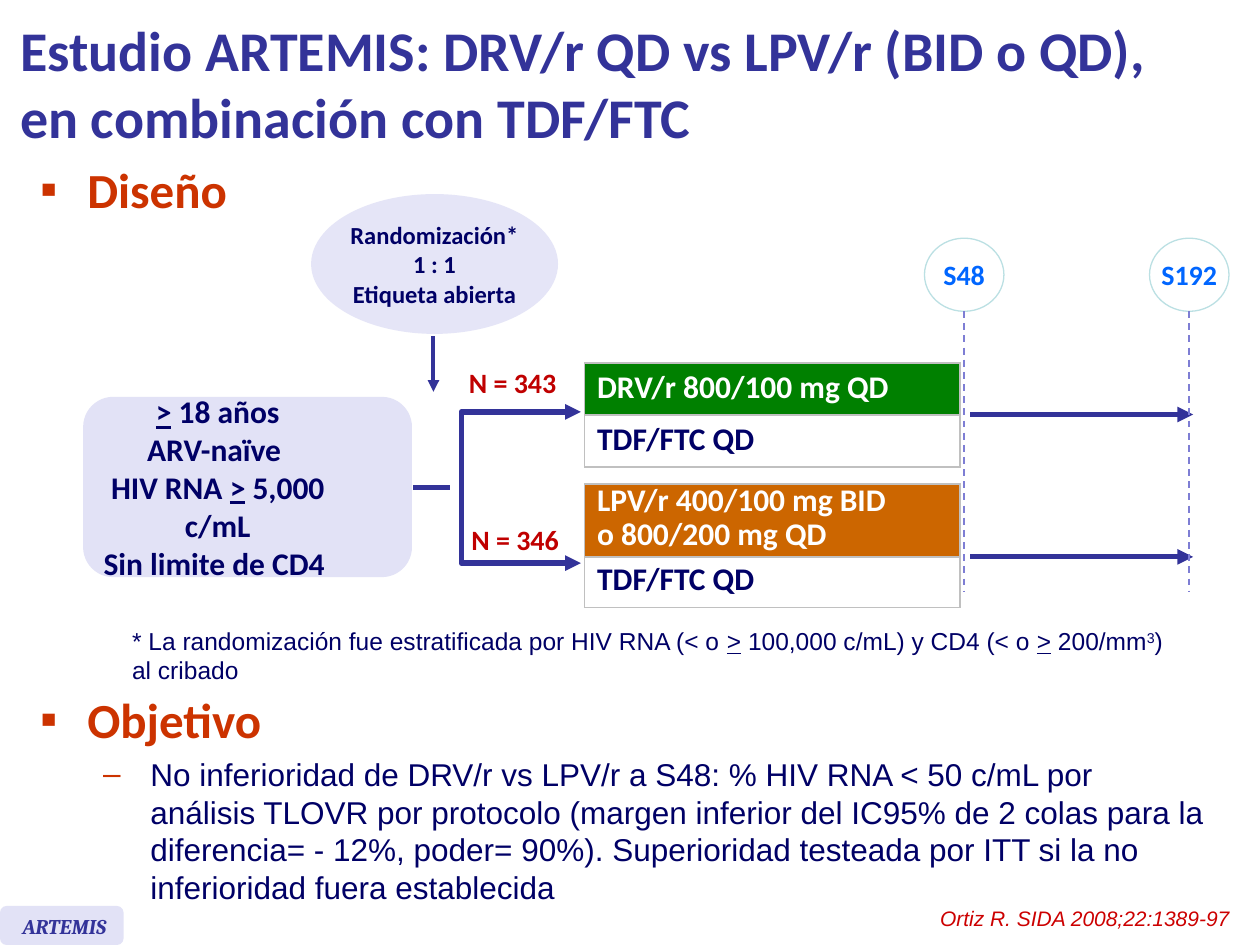
"""Build the ARTEMIS study design slide."""
from dataclasses import dataclass
from typing import Any, NamedTuple

from lxml import etree
from pptx import Presentation
from pptx.dml.color import RGBColor
from pptx.enum import dml, shapes, text
from pptx.oxml import ns
from pptx.util import Pt

COLOURS = {
    "indigo": "333399", "navy": "000066", "rust": "CC3300", "crimson": "C00000",
    "citation": "CC0000", "visit": "0066FF", "visit_edge": "BBE0E3", "guide": "7E7ED4",
    "lilac": "E2E2F6", "pale": "E5E5F7", "white": "FFFFFF", "grid": "C0C0C0",
    "green": "008000", "orange": "CC6600",
}
LEFT, CENTRE, RIGHT = text.PP_ALIGN.LEFT, text.PP_ALIGN.CENTER, text.PP_ALIGN.RIGHT
MIDDLE = text.MSO_ANCHOR.MIDDLE


class Box(NamedTuple):
    """Left, top, width and height in points."""
    left: float
    top: float
    width: float
    height: float


class Piece(NamedTuple):
    """A run of text with its own marks."""
    words: str
    underline: bool = False
    raised: bool = False


@dataclass
class Style:
    """Character and paragraph format."""
    size: float
    colour: str
    name: str = "Calibri"
    bold: bool = True
    italic: bool = False
    align: Any = LEFT
    spacing: float = 1.0
    before: float = 0


@dataclass
class Arm:
    """A treatment arm shown as a two-row table."""
    box: Box
    regimen: tuple
    fill: str
    heights: tuple
    spacing: float


@dataclass
class Visit:
    """A study visit with its vertical guide."""
    label: str
    centre: float


def rgb(key: str) -> RGBColor:
    """Return a palette colour."""
    return RGBColor.from_string(COLOURS[key])


def assign(target: Any, values: dict) -> None:
    """Set attributes from a dict."""
    for attribute, value in values.items():
        setattr(target, attribute, value)


def sub(parent: Any, tag: str, **attributes: str) -> Any:
    """Append a drawing element."""
    return etree.SubElement(parent, ns.qn(tag), attributes)


def write(frame: Any, paragraphs: tuple, style: Style) -> None:
    """Fill a text frame; a paragraph is a string or a tuple of pieces."""
    for index, content in enumerate(paragraphs):
        para = frame.paragraphs[0] if index == 0 else frame.add_paragraph()
        assign(para, {"alignment": style.align, "line_spacing": style.spacing,
                      "space_before": Pt(style.before if index else 0)})
        for piece in (Piece(content),) if isinstance(content, str) else content:
            for part, words in enumerate(piece.words.split("\v")):
                if part:
                    para.add_line_break()
                run = para.add_run()
                run.text = words
                assign(run.font, {"name": style.name, "size": Pt(style.size), "bold": style.bold,
                                  "italic": style.italic, "underline": piece.underline})
                run.font.color.rgb = rgb(style.colour)
                if piece.raised:
                    run.font._element.set("baseline", "30000")


def label(slide: Any, box: Box, paragraphs: tuple, style: Style, wrap: bool = True) -> Any:
    """Add a text box."""
    frame = slide.shapes.add_textbox(*map(Pt, box)).text_frame
    frame.word_wrap = wrap
    write(frame, paragraphs, style)
    return frame


def bullet(para: Any, mark: str, indent: float) -> None:
    """Give a paragraph a hanging bullet."""
    props = para._p.get_or_add_pPr()
    assign_to = {"marL": str(Pt(indent)), "indent": str(-Pt(27))}
    for key, value in assign_to.items():
        props.set(key, value)
    sub(sub(props, "a:buClr"), "a:srgbClr", val=COLOURS["rust"])
    sub(props, "a:buFont", typeface="Arial")
    sub(props, "a:buChar", char=mark)


def panel(slide: Any, kind: Any, box: Box, fill: str, edge: str = "") -> Any:
    """Add a filled shape and return its text frame."""
    shape = slide.shapes.add_shape(kind, *map(Pt, box))
    shape.shadow.inherit = False
    shape.fill.solid()
    shape.fill.fore_color.rgb = rgb(fill)
    if edge:
        shape.line.color.rgb = rgb(edge)
        shape.line.width = Pt(0.75)
    else:
        shape.line.fill.background()
    assign(shape.text_frame, {"word_wrap": False, "vertical_anchor": MIDDLE})
    return shape.text_frame


def stroke(shape: Any, colour: str, width: float, heads: tuple = ()) -> None:
    """Format a line and its arrowheads."""
    shape.line.color.rgb = rgb(colour)
    shape.line.width = Pt(width)
    for end in heads:
        sub(shape.line._get_or_add_ln(), end, type="triangle")


def link(slide: Any, start: tuple, end: tuple, width: float, colour: str = "indigo",
         heads: tuple = (), dashed: bool = False) -> None:
    """Add a straight line."""
    line = slide.shapes.add_connector(shapes.MSO_CONNECTOR.STRAIGHT, *map(Pt, start + end))
    if dashed:
        line.line.dash_style = dml.MSO_LINE.DASH
    stroke(line, colour, width, heads)
    sub(line._element.spPr, "a:effectLst")


def bracket(slide: Any, points: list) -> None:
    """Add the split into both arms."""
    corners = [tuple(map(Pt, point)) for point in points]
    builder = slide.shapes.build_freeform(*corners[0], scale=1.0)
    builder.add_line_segments(corners[1:], close=False)
    split = builder.convert_to_shape()
    split.shadow.inherit = False
    split.fill.background()
    stroke(split, "indigo", 3, ("a:headEnd", "a:tailEnd"))


def arm_table(slide: Any, arm: Arm) -> None:
    """Add the table of one arm."""
    table = slide.shapes.add_table(2, 1, *map(Pt, arm.box)).table
    assign(table, {"first_row": False, "horz_banding": False})
    rows = ((arm.regimen, arm.fill, "white"), (("TDF/FTC QD",), "white", "navy"))
    for index, (words, fill, ink) in enumerate(rows):
        table.rows[index].height = Pt(arm.heights[index])
        cell = table.cell(index, 0)
        cell.vertical_anchor = MIDDLE
        for side in ("a:lnL", "a:lnR", "a:lnT", "a:lnB"):
            border = sub(cell._tc.get_or_add_tcPr(), side, w=str(Pt(1)))
            sub(sub(border, "a:solidFill"), "a:srgbClr", val=COLOURS["grid"])
        cell.fill.solid()
        cell.fill.fore_color.rgb = rgb(fill)
        write(cell.text_frame, words, Style(18, ink, spacing=arm.spacing, before=3.6))


def main() -> None:
    """Assemble and save the slide."""
    deck = Presentation()
    assign(deck, {"slide_width": Pt(720), "slide_height": Pt(540)})
    slide = deck.slides.add_slide(deck.slide_layouts[5])
    oval, rounded = shapes.MSO_SHAPE.OVAL, shapes.MSO_SHAPE.ROUNDED_RECTANGLE
    tail = ("a:tailEnd",)

    title = slide.shapes.title
    assign(title, dict(zip(("left", "top", "width", "height"), map(Pt, (4.3, 3.6, 715.7, 87)))))
    assign(title.text_frame, {"auto_size": text.MSO_AUTO_SIZE.NONE, "vertical_anchor": MIDDLE})
    write(title.text_frame, ("Estudio ARTEMIS: DRV/r QD vs LPV/r (BID o QD),\v"
                             "en combinación con TDF/FTC",), Style(32, "indigo"))

    panel(slide, rounded, Box(0, 517.7, 70.6, 22.3), "lilac")
    label(slide, Box(5.8, 518.4, 67, 21.6), ("ARTEMIS",), Style(12, "indigo", "Cambria", italic=True))

    heading = Style(28, "rust")
    design = label(slide, Box(15.8, 87.5, 142.6, 45.4), ("Diseño",), heading)
    goal = label(slide, Box(15.8, 390.5, 697.7, 113.8), ("Objetivo",), heading)
    bullet(design.paragraphs[0], "▪", 27)
    bullet(goal.paragraphs[0], "▪", 27)
    detail = goal.add_paragraph()
    bullet(detail, "–", 63)
    assign(detail, {"level": 1, "space_before": Pt(3.6)})
    assign(detail.font, {"name": "Arial", "size": Pt(18), "bold": False})
    detail.font.color.rgb = rgb("navy")
    detail.text = ("No inferioridad de DRV/r vs LPV/r a S48: % HIV RNA < 50 c/mL por \v"
                   "análisis TLOVR por protocolo (margen inferior del IC95% de 2 colas para la "
                   "diferencia= - 12%, poder= 90%). Superioridad testeada por ITT si la no "
                   "inferioridad fuera establecida")
    for run in detail.runs:
        assign(run.font, {"name": "Arial", "size": Pt(18), "bold": False})
        run.font.color.rgb = rgb("navy")

    for count, left, top in (("N = 346", 262, 295.2), ("N = 343", 260.6, 205.2)):
        label(slide, Box(left, top, 64.8, 26.6), (count,), Style(16, "crimson", align=CENTRE), False)
    for height in (236.9, 318.2):
        link(slide, (554.4, height), (681.8, height), 3, heads=tail)
    link(slide, (247.7, 192.2), (247.7, 223.9), 2.25, heads=tail)

    for arm in (
        Arm(Box(334, 207.4, 214.6, 59.4), ("DRV/r 800/100 mg QD",), "green", (29.7, 29.7), 0.8),
        Arm(Box(334, 276.5, 214.6, 70.6), ("LPV/r 400/100 mg BID", "o 800/200 mg QD"),
            "orange", (41.8, 28.8), 0.7),
    ):
        arm_table(slide, arm)

    random = panel(slide, oval, Box(177.8, 110.9, 141.1, 79.9), "pale")
    write(random, ("Randomización*", "1 : 1", "Etiqueta abierta"), Style(14, "navy", align=CENTRE))

    at_least = Piece(">", underline=True)
    criteria = panel(slide, rounded, Box(47.5, 226.8, 187.9, 103), "lilac")
    assign(criteria, {"word_wrap": True, "margin_left": Pt(5), "margin_right": Pt(39)})
    write(criteria, ((at_least, Piece(" 18 años")), "ARV-naïve ",
                     (Piece("HIV RNA "), at_least, Piece(" 5,000 c/mL")), "Sin limite de CD4 "),
          Style(18, "navy", align=CENTRE))

    label(slide, Box(68.4, 354.2, 613.4, 41), ((
        Piece("* La randomización fue estratificada por HIV RNA (< o "), at_least,
        Piece(" 100,000 c/mL) y CD4 (< o "), at_least, Piece(" 200/mm"),
        Piece("3", raised=True), Piece(") al cribado")),), Style(14, "navy", "Arial", False))

    for visit in (Visit("S192", 679.6), Visit("S48", 551)):
        badge = panel(slide, oval, Box(visit.centre - 22.7, 136.1, 45.4, 41.8), "white", "visit_edge")
        write(badge, (visit.label,), Style(16, "visit", align=CENTRE))
        link(slide, (visit.centre, 177.8), (visit.centre, 338.4), 1, "guide", dashed=True)

    bracket(slide, [(331.9, 235.4), (263.5, 235.4), (263.5, 321.8), (331.9, 321.8)])
    link(slide, (236.2, 278.6), (257, 278.6), 3)
    label(slide, Box(493.9, 514.1, 216, 21.6), ("Ortiz R. SIDA 2008;22:1389-97",),
          Style(12, "citation", "Arial", False, True, RIGHT))
    deck.save("out.pptx")


if __name__ == "__main__":
    main()
